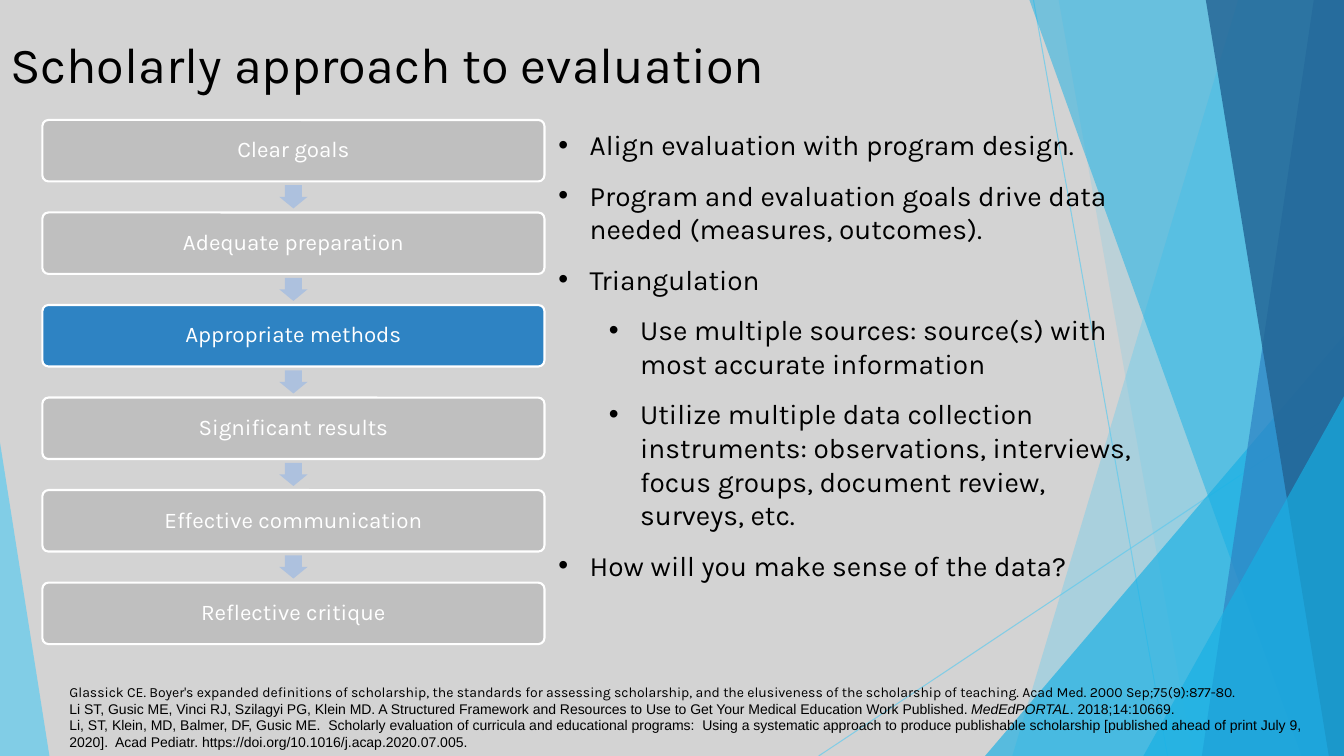
from lxml.etree import SubElement
from pptx import Presentation
from pptx.dml.color import RGBColor
from pptx.enum.shapes import MSO_CONNECTOR, MSO_SHAPE
from pptx.enum.text import MSO_ANCHOR, MSO_AUTO_SIZE, PP_ALIGN
from pptx.oxml.ns import qn
from pptx.util import Inches, Pt

SKY, CYAN, BLUE, NAVY = "5FCBEF", "17B0E4", "2E83C3", "226292"
GRAY, PALE, WHITE, BLACK = "BFBFBF", "ADC1DE", "FFFFFF", "000000"
WIDE, HIGH = 13.33, 7.5

STEPS = ["Clear goals", "Adequate preparation", "Appropriate methods",
         "Significant results", "Effective communication",
         "Reflective critique"]
ACTIVE = "Appropriate methods"

POINTS = [
    (0, "Align evaluation with program design."),
    (0, "Program and evaluation goals drive data needed (measures, outcomes)."),
    (0, "Triangulation"),
    (1, "Use multiple sources: source(s) with most accurate information"),
    (1, "Utilize multiple data collection instruments: observations, "
        "interviews, focus groups, document review, surveys, etc."),
    (0, "How will you make sense of the data?"),
]

# Each citation is a list of (text, font, italic) runs.
CITES = [
    [("Glassick CE. Boyer's expanded definitions of scholarship, the standards "
      "for assessing scholarship, and the elusiveness of the scholarship of "
      "teaching. Acad Med. 2000 Sep;75(9):877-80.", "Karla", False)],
    [("Li ST, Gusic ME, Vinci RJ, Szilagyi PG, Klein MD. A Structured Framework "
      "and Resources to Use to Get Your Medical Education Work Published. ",
      "Arial", False),
     ("MedEdPORTAL", "Arial", True),
     (". 2018;14:10669.", "Arial", False)],
    [("Li, ST, Klein, MD, Balmer, DF, Gusic ME.  Scholarly evaluation of "
      "curricula and educational programs:  Using a systematic approach to "
      "produce publishable scholarship [published ahead of print July 9, "
      "2020].  Acad Pediatr. https://doi.org/10.1016/j.acap.2020.07.005.",
      "Arial", False)],
]


def color(code):
    return RGBColor.from_string(code)


def fade(shape, alpha):
    """Set the opacity, in percent, of every colour of the shape."""
    for tint in shape._element.spPr.iter(qn("a:srgbClr")):
        SubElement(tint, qn("a:alpha"), val=str(alpha * 1000))


def write(para, text, size=20, font="Karla", ink=BLACK, italic=False,
          align=PP_ALIGN.LEFT):
    """Add one run to a paragraph."""
    para.alignment = align
    run = para.add_run()
    run.text = text
    run.font.size, run.font.name = Pt(size), font
    run.font.italic = italic
    run.font.color.rgb = color(ink)


def bullet(para, level):
    para.level = level
    para.space_before = para.space_after = Pt(6)
    props = para._p.get_or_add_pPr()
    props.set("marL", str(Inches(0.31 + 0.5 * level)))
    props.set("indent", str(Inches(-0.31)))
    SubElement(props, qn("a:buFont"), typeface="Arial")
    SubElement(props, qn("a:buChar"), char="•")


class Deck:
    def __init__(self):
        self.prs = Presentation()
        self.prs.slide_width = Inches(WIDE)
        self.prs.slide_height = Inches(HIGH)
        self.slide = self.prs.slides.add_slide(self.prs.slide_layouts[5])
        self.shapes = self.slide.shapes
        back = self.slide.background.fill
        back.solid()
        back.fore_color.rgb = color("D3D3D3")

    def paint(self, shape, fill, line=None, alpha=None):
        shape.shadow.inherit = False
        shape.fill.solid()
        shape.fill.fore_color.rgb = color(fill)
        if line:
            shape.line.color.rgb = color(line)
            shape.line.width = Pt(1.5)
        else:
            shape.line.fill.background()
        if alpha:
            fade(shape, alpha)
        return shape

    def line(self, *ends):
        line = self.shapes.add_connector(MSO_CONNECTOR.STRAIGHT,
                                         *map(Inches, ends))
        line.line.color.rgb = color(SKY)
        line.line.width = Pt(0.75)
        SubElement(line._element.spPr, qn("a:effectLst"))
        fade(line, 70)

    def band(self, points, fill, alpha):
        """Draw a translucent polygon through points given in inches."""
        first, *rest = [(Inches(x), Inches(y)) for x, y in points]
        form = self.shapes.build_freeform(*first)
        form.add_line_segments(rest, close=True)
        self.paint(form.convert_to_shape(), fill, alpha=alpha)

    def shape(self, kind, box, fill, adjust=(), **style):
        shape = self.shapes.add_shape(kind, *map(Inches, box))
        for i, value in enumerate(adjust):
            shape.adjustments[i] = value
        return self.paint(shape, fill, **style)

    def title(self, text, box):
        title = self.shapes.title
        title.left, title.top, title.width, title.height = map(Inches, box)
        frame = title.text_frame
        frame.vertical_anchor = MSO_ANCHOR.MIDDLE
        frame.auto_size = MSO_AUTO_SIZE.NONE
        write(frame.paragraphs[0], text, size=36)

    def step(self, text, box, fill):
        shape = self.shape(MSO_SHAPE.ROUNDED_RECTANGLE, box, fill, [0.1],
                           line=WHITE)
        frame = shape.text_frame
        frame.word_wrap = True
        frame.vertical_anchor = MSO_ANCHOR.MIDDLE
        para = frame.paragraphs[0]
        para.line_spacing = 0.9
        write(para, text, size=16, ink=WHITE, align=PP_ALIGN.CENTER)

    def paras(self, box, count):
        """Add a text box and return its empty paragraphs."""
        frame = self.shapes.add_textbox(*map(Inches, box)).text_frame
        frame.word_wrap = True
        frame.auto_size = MSO_AUTO_SIZE.SHAPE_TO_FIT_TEXT
        for _ in range(count - 1):
            frame.add_paragraph()
        return frame.paragraphs


def facets(deck):
    """Draw the translucent shards at both edges of the slide."""
    def right(top, foot, fill, alpha):
        deck.band([(top, 0), (WIDE, 0), (WIDE, HIGH), (foot, HIGH)],
                  fill, alpha)

    def wedge(left, top, width, tip, fill, alpha):
        deck.shape(MSO_SHAPE.ISOSCELES_TRIANGLE,
                   (left, top, width, HIGH - top), fill, [tip], alpha=alpha)

    deck.line(10.25, 0, 11.58, HIGH)
    deck.line(WIDE, 4.03, 8.12, HIGH)
    right(12.28, 10.04, SKY, 36)
    right(10.5, 11.83, SKY, 20)
    wedge(9.77, 3.33, 3.56, 1, CYAN, 66)
    right(10.21, 12.91, CYAN, 50)
    right(13.03, 11.92, BLUE, 70)
    right(11.96, 13.18, NAVY, 80)
    wedge(11.34, 3.93, 1.99, 1, CYAN, 66)
    wedge(0, 4.39, 0.49, 0, SKY, 70)


def flow(deck):
    left, top, width, height = 0.42, 1.19, 4.98, 0.61
    pitch = 4.59 / (len(STEPS) - 1)
    for i, name in enumerate(STEPS):
        y = top + i * pitch
        if i:
            deck.shape(MSO_SHAPE.DOWN_ARROW,
                       (left + width / 2 - 0.14, y - 0.27, 0.28, 0.23),
                       PALE, [0.6, 0.5])
        deck.step(name, (left, y, width, height),
                  BLUE if name == ACTIVE else GRAY)


def main():
    deck = Deck()
    facets(deck)
    deck.title("Scholarly approach to evaluation", (0, 0.21, 9.4, 0.83))
    flow(deck)
    paras = deck.paras((5.44, 1.22, 5.98, 4.64), len(POINTS))
    for para, (level, text) in zip(paras, POINTS):
        bullet(para, level)
        write(para, text)
    paras = deck.paras((0.59, 6.73, 12.74, 0.77), len(CITES))
    for para, runs in zip(paras, CITES):
        for text, font, italic in runs:
            write(para, text, size=10, font=font, italic=italic)
    deck.prs.save("out.pptx")


if __name__ == "__main__":
    main()
